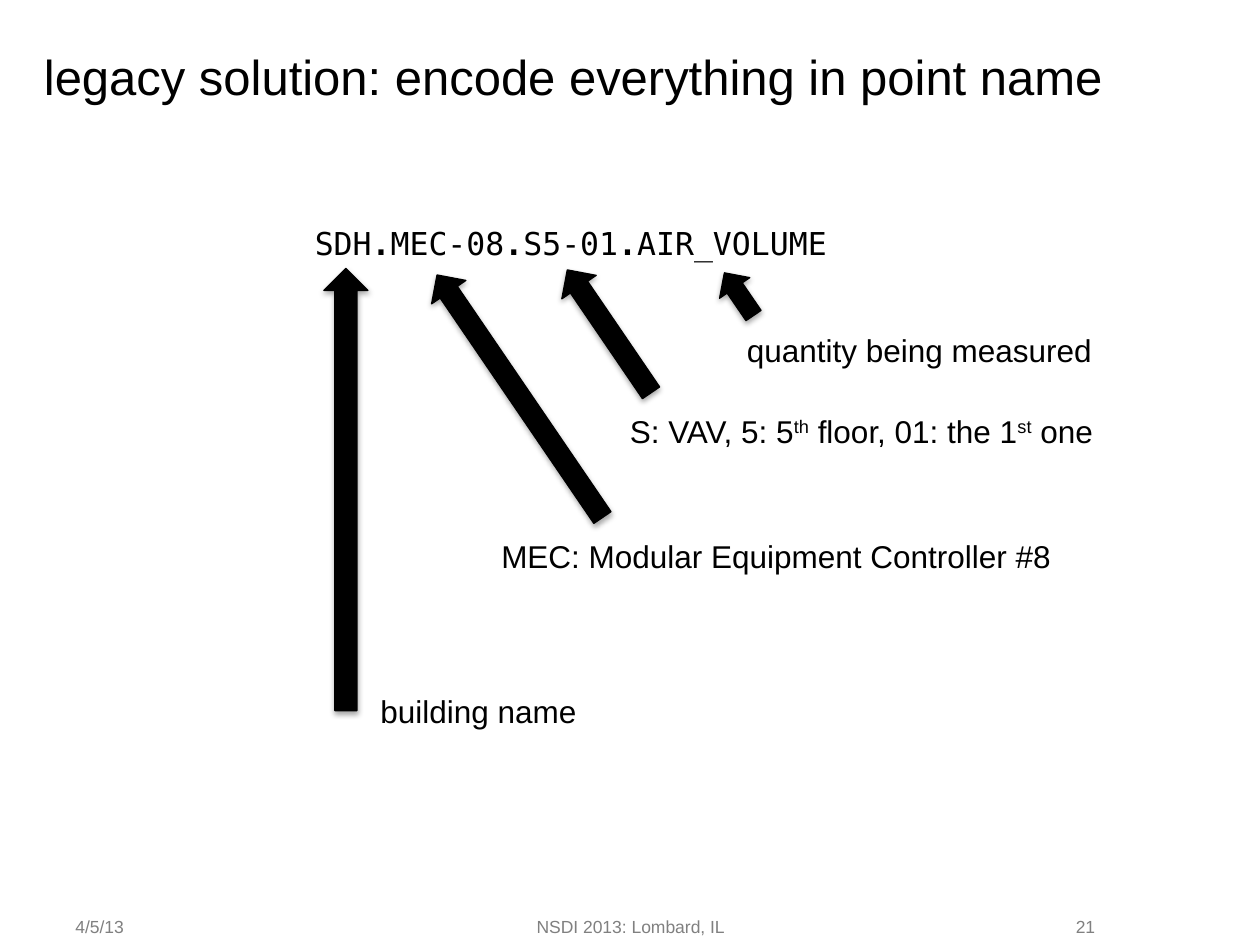
from lxml import etree
from pptx import Presentation
from pptx.dml.color import RGBColor
from pptx.enum import shapes, text
from pptx.oxml import ns
from pptx.util import Inches, Pt

INK = {"main": "000000", "foot": "808080"}
SANS, MONO = "Arial", "DejaVu Sans Mono"
LEFT, MID, RIGHT = text.PP_ALIGN.LEFT, text.PP_ALIGN.CENTER, text.PP_ALIGN.RIGHT

deck = Presentation()
deck.slide_width, deck.slide_height = Inches(10), Inches(7.5)
slide = deck.slides.add_slide(deck.slide_layouts[6])


def write(parts, spot, size=18, face=SANS, ink="main", align=LEFT, foot=False):
    """Add a one-line box; parts are (words, mark), mark "b" bold or "up" raised."""
    box = slide.shapes.add_textbox(*map(Inches, spot))
    frame = box.text_frame
    frame.word_wrap = foot
    if foot:
        frame.vertical_anchor = text.MSO_ANCHOR.MIDDLE
    line = frame.paragraphs[0]
    line.alignment = align
    font = line.font
    font.size, font.name = Pt(size), face
    font.color.rgb = RGBColor.from_string(INK[ink])
    for words, mark in parts:
        run = line.add_run()
        run.text = words
        if mark == "b":
            run.font.bold = True
        elif mark == "up":
            run.font._element.set("baseline", "30000")


def point(spot, turn):
    """Add a black block arrow with a soft shadow below it."""
    arrow = slide.shapes.add_shape(shapes.MSO_SHAPE.UP_ARROW, *map(Inches, spot))
    arrow.rotation = turn
    black = RGBColor.from_string(INK["main"])
    arrow.fill.solid()
    arrow.fill.fore_color.rgb = black
    arrow.line.color.rgb = black
    arrow.line.width = Pt(0.75)
    arrow.shadow.inherit = False
    glow = arrow._element.spPr.find(ns.qn("a:effectLst"))
    shade = etree.SubElement(glow, ns.qn("a:outerShdw"), blurRad="40000",
                             dist="23000", dir="5400000", rotWithShape="0")
    tint = etree.SubElement(shade, ns.qn("a:srgbClr"), val=INK["main"])
    etree.SubElement(tint, ns.qn("a:alpha"), val="35000")


write([("legacy solution: encode everything in point name", "")],
      (0.25, 0.32, 8.69, 0.57), size=28)
write([("SDH", ""), (".", "b"), ("MEC-08", ""), (".", "b"), ("S5-01", ""),
       (".", "b"), ("AIR_VOLUME", "")], (2.4, 1.73, 4.34, 0.4), face=MONO)

# Each part of the point name: label, label box, arrow box, arrow turn
SLANT = 325.7
notes = [
    ([("building name", "")],
     (2.92, 5.44, 1.77, 0.4), (2.57, 2.13, 0.35, 3.51), 0),
    ([("MEC: Modular Equipment Controller #8", "")],
     (3.88, 4.21, 4.61, 0.4), (3.96, 1.98, 0.33, 2.33), SLANT),
    ([("S: VAV, 5: 5", ""), ("th", "up"), (" floor, 01: the 1", ""),
      ("st", "up"), (" one", "")],
     (4.9, 3.22, 3.95, 0.4), (4.67, 2.04, 0.33, 1.18), SLANT),
    ([("quantity being measured", "")],
     (5.83, 2.58, 2.97, 0.4), (5.72, 2.13, 0.29, 0.41), SLANT),
]
for label, spot, shaft, turn in notes:
    write(label, spot)
    point(shaft, turn)

for words, left, width, align in [("4/5/13", 0.5, 2.33, LEFT),
                                  ("NSDI 2013: Lombard, IL", 3.42, 3.17, MID),
                                  ("21", 7.17, 1.62, RIGHT)]:
    write([(words, "")], (left, 7.25, width, 0.2), size=10, ink="foot",
          align=align, foot=True)

deck.save("out.pptx")
